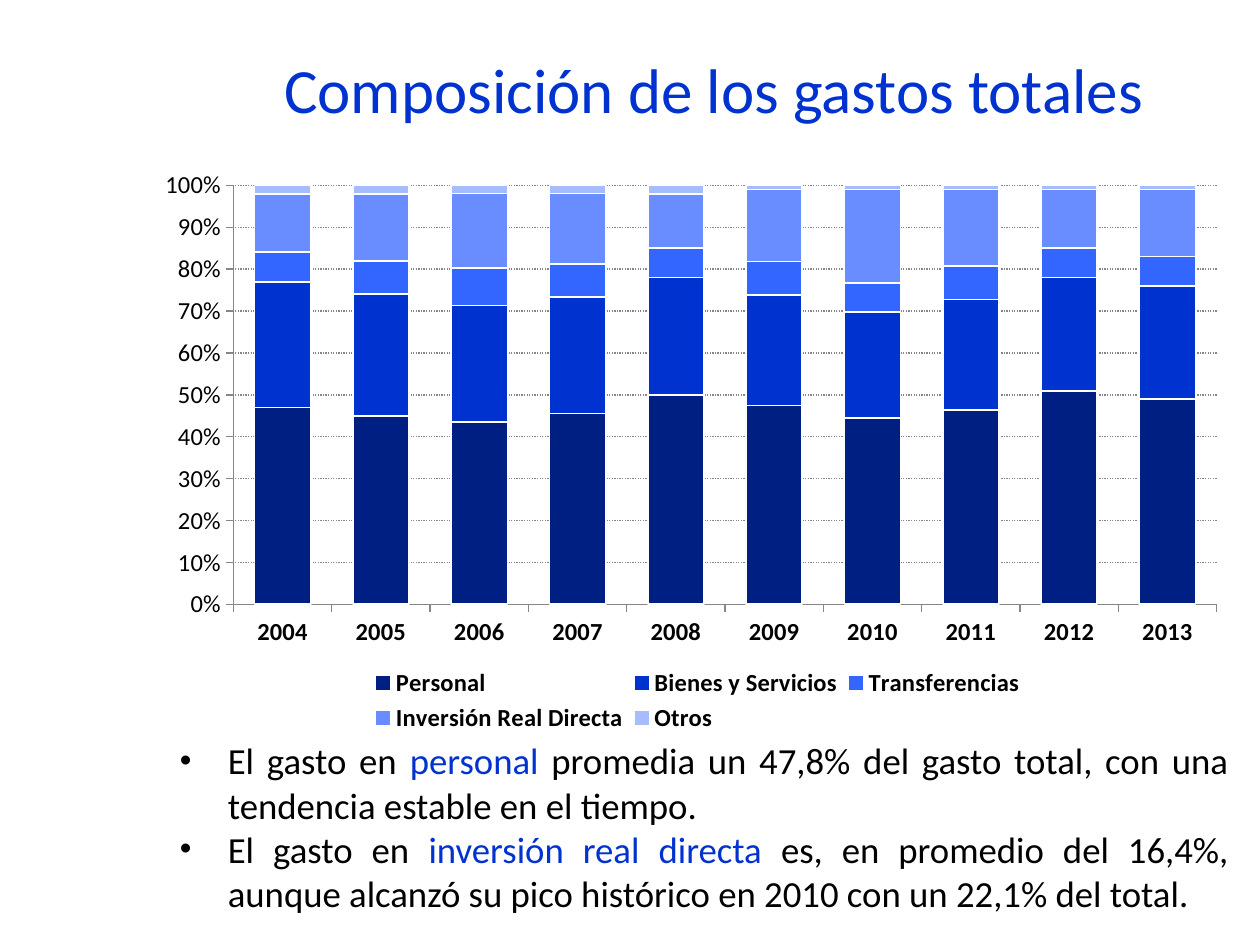
"""Builds a slide on the yearly composition of total spending."""
from dataclasses import dataclass
from typing import Any

from lxml import etree
from pptx import Presentation
from pptx import util as u
from pptx.chart import data
from pptx.dml import color
from pptx.enum import chart as ch, dml, text
from pptx.oxml import ns

BLACK, BLUE, GREY, WHITE = "000000", "0032D0", "868686", "FFFFFF"
YEARS = [str(year) for year in range(2004, 2014)]
SPENDING = {
    "Personal": ("001F82", [47, 45, 44, 46, 50, 47, 44, 46, 51, 49]),
    "Bienes y Servicios": (BLUE, [30, 29, 28, 28, 28, 26, 25, 26, 27, 27]),
    "Transferencias": ("3366FF", [7, 8, 9, 8, 7, 8, 7, 8, 7, 7]),
    "Inversión Real Directa": ("698DFF", [14, 16, 18, 17, 13, 17, 22, 18, 14, 16]),
    "Otros": ("A7BCFF", [2, 2, 2, 2, 2, 1, 1, 1, 1, 1]),
}
FINDINGS = [
    [("El gasto en ", BLACK), ("personal", BLUE),
     (" promedia un 47,8% del gasto total, con una tendencia estable en el tiempo.", BLACK)],
    [("El gasto en ", BLACK), ("inversión real directa ", BLUE),
     ("es, en promedio del 16,4%, aunque alcanzó su pico histórico en 2010 "
      "con un 22,1% del total.", BLACK)],
]


def rgb(value):
    return color.RGBColor.from_string(value)


def inches(*lengths):
    return [u.Inches(length) for length in lengths]


def style_font(font, size=14, fill=BLACK, bold=False, name="Calibri"):
    font.name, font.size, font.bold = name, u.Pt(size), bold
    font.color.rgb = rgb(fill)


def add_text(paragraph, words, **style):
    run = paragraph.add_run()
    run.text = words
    style_font(run.font, **style)


def style_line(line, fill, width=0.75):
    line.color.rgb, line.width = rgb(fill), u.Pt(width)


def make_layout(x, y, w, h, inner=False):
    layout = etree.Element(ns.qn("c:layout"))
    manual = etree.SubElement(layout, ns.qn("c:manualLayout"))
    target = [("layoutTarget", "inner")] if inner else []
    settings = target + [("xMode", "edge"), ("yMode", "edge"),
                         ("x", x), ("y", y), ("w", w), ("h", h)]
    for tag, value in settings:
        etree.SubElement(manual, ns.qn(f"c:{tag}"), val=str(value))
    return layout


@dataclass
class SlideBuilder:
    slide: Any
    body_size: float = 21
    title_size: float = 36

    def title(self, words, box):
        heading = self.slide.shapes.title
        heading.left, heading.top, heading.width, heading.height = inches(*box)
        heading.text_frame.vertical_anchor = text.MSO_ANCHOR.MIDDLE
        paragraph = heading.text_frame.paragraphs[0]
        paragraph.alignment = text.PP_ALIGN.CENTER
        add_text(paragraph, words, size=self.title_size, fill=BLUE)

    def stacked_chart(self, categories, series, box):
        figures = data.CategoryChartData(number_format="0")
        figures.categories = categories
        for name, (_, values) in series.items():
            figures.add_series(name, values)
        chart = self.slide.shapes.add_chart(
            ch.XL_CHART_TYPE.COLUMN_STACKED_100, *inches(*box), figures).chart
        style_font(chart.font, size=18)
        chart.has_title = False
        columns = chart.plots[0]
        columns.gap_width, columns.overlap, columns.vary_by_categories = 75, 100, False
        for column, (fill, _) in zip(columns.series, series.values()):
            column.format.fill.solid()
            column.format.fill.fore_color.rgb = rgb(fill)
            style_line(column.format.line, WHITE, 1)
        self.axes(chart)
        self.legend(chart)

    def axes(self, chart):
        years, share = chart.category_axis, chart.value_axis
        for axis in (years, share):
            axis.major_tick_mark = ch.XL_TICK_MARK.OUTSIDE
            axis.minor_tick_mark = ch.XL_TICK_MARK.NONE
            style_line(axis.format.line, GREY)
            style_font(axis.tick_labels.font, bold=axis is years)
        share.minimum_scale, share.maximum_scale, share.major_unit = 0, 1, 0.1
        share.tick_labels.number_format = "0%"
        share.tick_labels.number_format_is_linked = False
        grid = share.major_gridlines.format.line
        style_line(grid, GREY)
        grid.dash_style = dml.MSO_LINE.ROUND_DOT
        plot_area = chart.plots[0]._element.getparent()
        for automatic in plot_area.findall(ns.qn("c:layout")):
            plot_area.remove(automatic)
        plot_area.insert(0, make_layout(0.08, 0.05, 0.9, 0.72, inner=True))

    def legend(self, chart):
        chart.has_legend = True
        legend = chart.legend
        legend.position = ch.XL_LEGEND_POSITION.BOTTOM
        legend.include_in_layout = False
        style_font(legend.font, bold=True)
        for automatic in legend._element.findall(ns.qn("c:layout")):
            legend._element.remove(automatic)
        position = legend._element.find(ns.qn("c:legendPos"))
        position.addnext(make_layout(0.2, 0.87, 0.61, 0.13))

    def bullets(self, items, box):
        frame = self.slide.shapes.add_textbox(*inches(*box)).text_frame
        frame.word_wrap = True
        frame.auto_size = text.MSO_AUTO_SIZE.SHAPE_TO_FIT_TEXT
        for index, parts in enumerate(items):
            paragraph = frame.add_paragraph() if index else frame.paragraphs[0]
            paragraph.alignment = text.PP_ALIGN.JUSTIFY
            properties = paragraph._p.get_or_add_pPr()
            indent = u.Inches(0.38)
            properties.set("marL", str(indent))
            properties.set("indent", str(-indent))
            etree.SubElement(properties, ns.qn("a:buSzPct"), val="90000")
            etree.SubElement(properties, ns.qn("a:buFont"), typeface="Arial")
            etree.SubElement(properties, ns.qn("a:buChar"), char="•")
            for words, fill in parts:
                add_text(paragraph, words, size=self.body_size, fill=fill)


def main():
    deck = Presentation()
    deck.slide_width, deck.slide_height = inches(10, 7.5)
    builder = SlideBuilder(deck.slides.add_slide(deck.slide_layouts.get_by_name("Title Only")))
    builder.title("Composición de los gastos totales", (1.83, 0.08, 7.67, 1.25))
    builder.stacked_chart(YEARS, SPENDING, (1.16, 1.24, 8.67, 4.62))
    builder.bullets(FINDINGS, (1.33, 5.81, 8.52, 1.51))
    deck.save("out.pptx")


if __name__ == "__main__":
    main()
